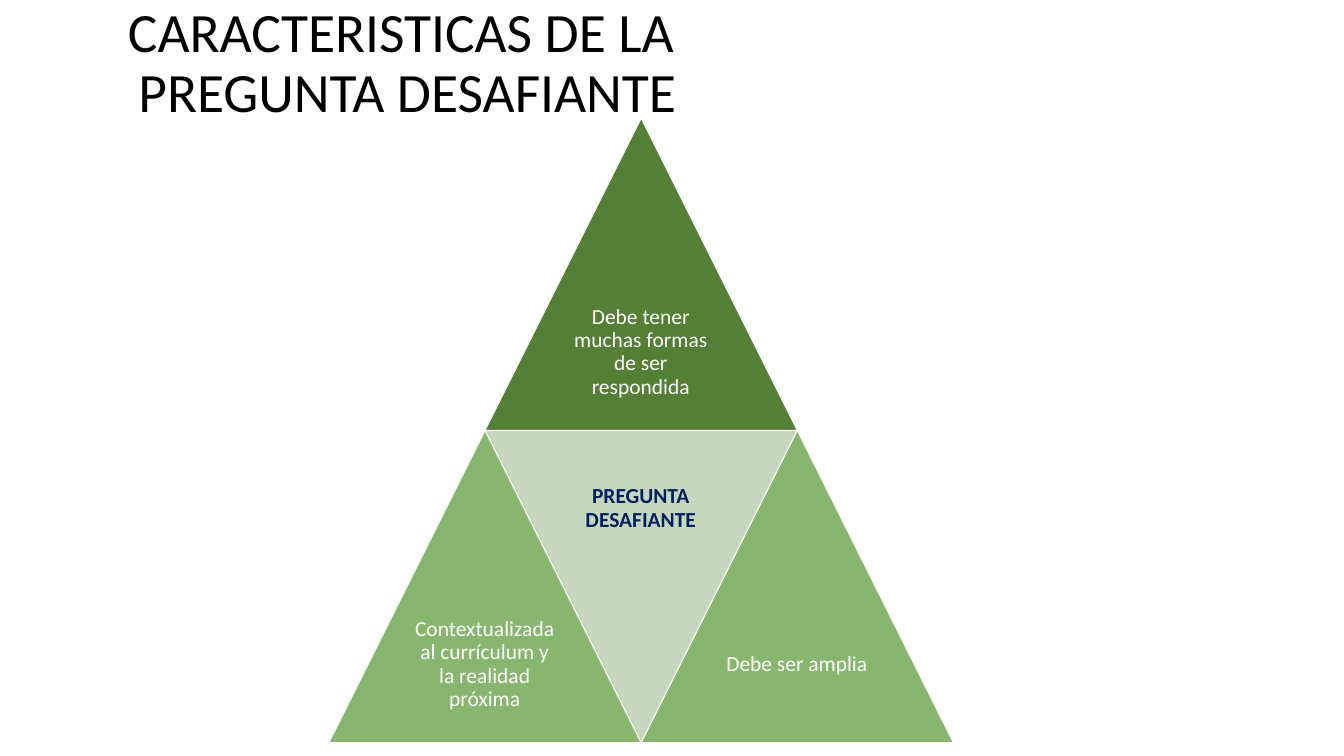
"""Build the slide on the features of a challenging question."""
import pptx
import pptx.dml.color
import pptx.enum.shapes
import pptx.enum.text
import pptx.util

PX = 9525
COLORS = {
    "black": "000000",
    "white": "FFFFFF",
    "dark green": "538035",
    "green": "87B76E",
    "pale green": "C5D8BD",
    "navy": "002060",
}
SIDE = 446
HALF = SIDE // 2
LEFT, TOP = 470, 169
MIDDLE = TOP + SIDE


class Deck:
    """Hold the style and the current slide."""

    def __init__(self, width, height):
        self.presentation = pptx.Presentation()
        self.presentation.slide_width = width * PX
        self.presentation.slide_height = height * PX
        self.slide = self.presentation.slides.add_slide(self.presentation.slide_layouts[5])
        self.diagram = self.slide.shapes.add_group_shape()

    def color(self, name):
        """Return the named colour."""
        return pptx.dml.color.RGBColor.from_string(COLORS[name])

    def set_text(self, frame, text, size, color, bold=False):
        """Fill a text frame with one centred paragraph."""
        frame.word_wrap = True
        frame.auto_size = pptx.enum.text.MSO_AUTO_SIZE.NONE
        frame.vertical_anchor = pptx.enum.text.MSO_ANCHOR.MIDDLE
        paragraph = frame.paragraphs[0]
        paragraph.text = text
        paragraph.alignment = pptx.enum.text.PP_ALIGN.CENTER
        paragraph.line_spacing = 0.9
        paragraph.font.name = "Calibri"
        paragraph.font.size = pptx.util.Pt(size)
        paragraph.font.bold = bold
        paragraph.font.color.rgb = self.color(color)

    def title(self, text, left, top, width, height):
        """Place and format the title placeholder."""
        heading = self.slide.shapes.title
        heading.left, heading.top = left * PX, top * PX
        heading.width, heading.height = width * PX, height * PX
        self.set_text(heading.text_frame, text, 59.4, "black")

    def triangle(self, left, top, fill, rotation=0):
        """Add one triangle to the pyramid."""
        part = self.diagram.shapes.add_shape(
            pptx.enum.shapes.MSO_SHAPE.ISOSCELES_TRIANGLE,
            left * PX, top * PX, SIDE * PX, SIDE * PX)
        part.rotation = rotation
        part.shadow.inherit = False
        part.fill.solid()
        part.fill.fore_color.rgb = self.color(fill)
        part.line.color.rgb = self.color("white")
        part.line.width = pptx.util.Pt(1)

    def label(self, text, left, top, color, bold=False):
        """Add a text box in the widest half of a triangle."""
        caption = self.diagram.shapes.add_textbox(left * PX, top * PX, HALF * PX, HALF * PX)
        frame = caption.text_frame
        frame.margin_left = frame.margin_right = 9 * PX
        frame.margin_top = frame.margin_bottom = 9 * PX
        self.set_text(frame, text, 23, color, bold)


def main():
    """Build and save the slide."""
    deck = Deck(1920, 1080)
    deck.title("CARACTERISTICAS DE LA \vPREGUNTA DESAFIANTE\v", -2, 36, 1168, 208)
    features = [
        ("Debe tener muchas formas de ser respondida", 1, TOP, "dark green", "white"),
        ("Contextualizada al currículum y la realidad próxima", 0, MIDDLE, "green", "white"),
        ("PREGUNTA DESAFIANTE", 1, MIDDLE, "pale green", "navy"),
        ("Debe ser amplia", 2, MIDDLE, "green", "white"),
    ]
    for text, step, top, fill, color in features:
        left = LEFT + step * HALF
        central = fill == "pale green"
        deck.triangle(left, top, fill, 180 if central else 0)
        deck.label(text, left + HALF // 2, top if central else top + HALF, color, central)
    deck.presentation.save("out.pptx")


if __name__ == "__main__":
    main()
